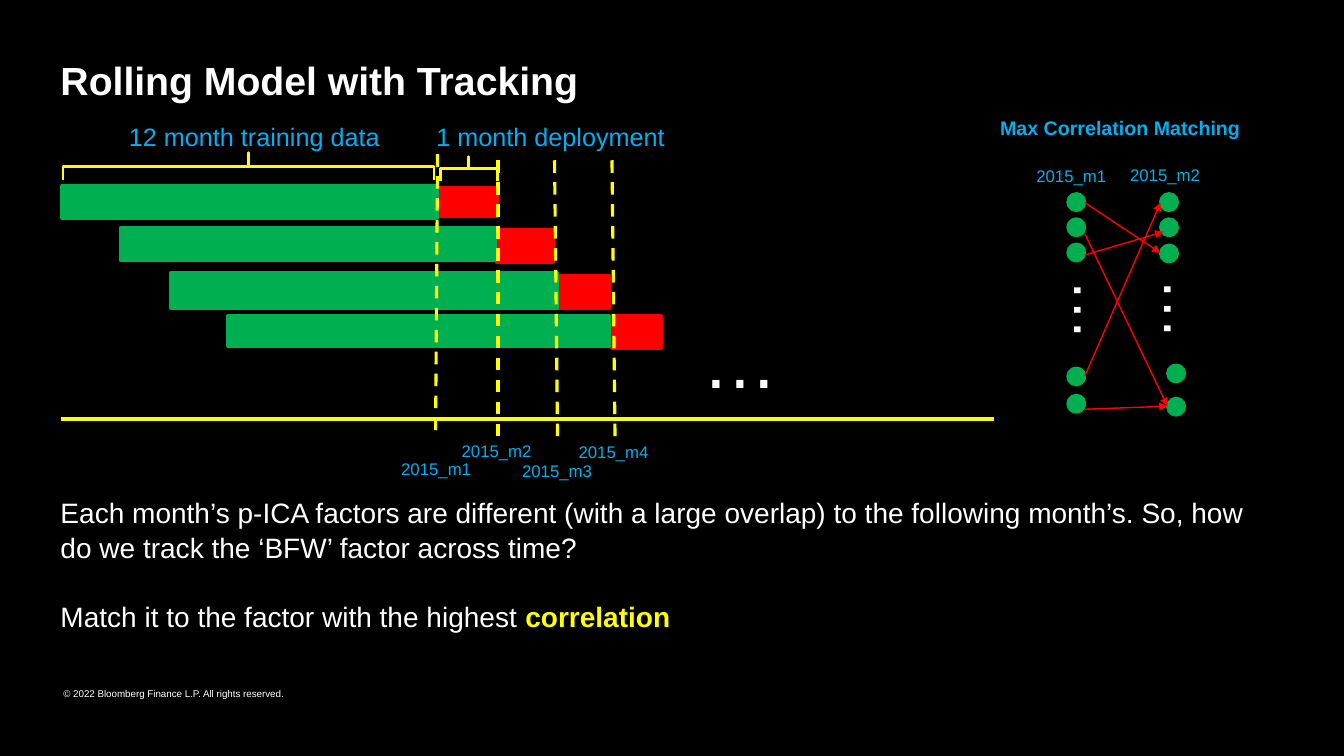
from pptx import Presentation
from pptx import util as u
from pptx.dml.color import RGBColor
from pptx.enum import dml, shapes, text
from pptx.oxml.ns import qn
from lxml import etree


class Theme:
    font = "Arial"
    black, white = RGBColor(0, 0, 0), RGBColor(255, 255, 255)
    green, red = RGBColor(0, 0xB0, 0x50), RGBColor(255, 0, 0)
    yellow, blue = RGBColor(255, 255, 0), RGBColor(0, 0xB0, 0xF0)
    title, body, heading, subheading, label, legal = 28, 20, 18, 14, 12, 7
    ellipsis, match_ellipsis = 54, 44


# Grid of square cells: 133.3 columns by 75 rows
CELL = u.Inches(0.1)
COLUMNS, ROWS = 133.3, 75

prs = Presentation()
prs.slide_width, prs.slide_height = int(COLUMNS * CELL), ROWS * CELL
slide = prs.slides.add_slide(prs.slide_layouts[1])
slide.background.fill.solid()
slide.background.fill.fore_color.rgb = Theme.black


def add_run(paragraph, words, size, color, bold=False):
    run = paragraph.add_run()
    run.text = words
    run.font.name, run.font.size, run.font.bold = Theme.font, u.Pt(size), bold
    run.font.color.rgb = color


def add_line(start, end, color, width):
    ends = [int(value * CELL) for value in (*start, *end)]
    line = slide.shapes.add_connector(shapes.MSO_CONNECTOR.STRAIGHT, *ends)
    line.line.color.rgb, line.line.width = color, u.Pt(width)
    properties = line.line._get_or_add_ln().getparent()
    etree.SubElement(properties, qn("a:effectLst"))
    return line


# Title and body text
title, body = slide.placeholders
for holder, area, anchor in (
    (title, (6, 5.2, 103, 5.4), text.MSO_ANCHOR.MIDDLE),
    (body, (6, 49, 120.9, 13.5), text.MSO_ANCHOR.TOP),
):
    holder.left, holder.top, holder.width, holder.height = (int(v * CELL) for v in area)
    frame = holder.text_frame
    frame.margin_left = frame.margin_right = frame.margin_top = frame.margin_bottom = 0
    frame.word_wrap, frame.vertical_anchor = True, anchor
    frame.auto_size = text.MSO_AUTO_SIZE.NONE

heading = title.text_frame.paragraphs[0]
heading.alignment = text.PP_ALIGN.LEFT
add_run(heading, "Rolling Model with Tracking", Theme.title, Theme.white, True)

question = body.text_frame.paragraphs[0]
answer = body.text_frame.add_paragraph()
for paragraph, gap in ((question, 0), (answer, 24)):
    paragraph.line_spacing, paragraph.space_before = 1.05, u.Pt(gap)
    layout = paragraph._p.get_or_add_pPr()
    layout.set("marL", "0")
    layout.set("indent", "0")
    etree.SubElement(layout, qn("a:buNone"))
add_run(question, "Each month’s p-ICA factors are different (with a large overlap) to the "
        "following month’s. So, how do we track the ‘BFW’ factor across time?",
        Theme.body, Theme.white)
add_run(answer, "Match it to the factor with the highest ", Theme.body, Theme.white)
add_run(answer, "correlation", Theme.body, Theme.yellow, True)

# Rolling windows: deployment month, then training year
BAR, DOT, BRACE = (shapes.MSO_SHAPE.RECTANGLE, shapes.MSO_SHAPE.OVAL,
                   shapes.MSO_SHAPE.LEFT_BRACE)
deployment = [(43.5, 18.6, 5.9, 2.9), (49.2, 22.8, 5.7, 3.3),
              (54.9, 27.3, 5.6, 3.3), (60.6, 31.3, 5, 3.3)]
training = [(6.1, 18.4, 37.3, 3.3), (11.9, 22.6, 37.3, 3.3),
            (16.9, 27, 38.4, 3.6), (22.6, 31.3, 37.9, 3.1)]
parts = [(BAR, area, Theme.red) for area in deployment]
parts += [(BAR, area, Theme.green) for area in training]

# Factors of two neighbouring months
left_factors = [(105.9, row) for row in (19.2, 21.7, 24.2, 36.5, 39.2)]
right_factors = [(115.1, 19.2), (115.1, 21.7), (115.1, 24.3), (115.8, 36.2), (115.8, 39.5)]
parts += [(DOT, (*corner, 1.7, 1.7), Theme.green) for corner in left_factors + right_factors]

# Braces over the first window
parts += [(BRACE, area, Theme.yellow)
          for area in ((23.3, -1.9, 2.7, 36.8), (45.3, 13.9, 2.4, 5.7))]

for kind, area, color in parts:
    shape = slide.shapes.add_shape(kind, *(int(v * CELL) for v in area))
    shape.shadow.inherit = False
    shape.line.color.rgb, shape.line.width = color, u.Pt(2)
    if kind == BRACE:
        shape.fill.background()
        shape.rotation = 90
        shape.adjustments[0], shape.adjustments[1] = 0, 0.5
    else:
        shape.fill.solid()
        shape.fill.fore_color.rgb = color

# Time axis and month boundaries
for top, bottom in (((43.4, 15.3), (43.2, 43.4)), ((49.4, 15.9), (49.4, 43.4)),
                    ((55, 15.9), (55.3, 43.4)), ((60.7, 15.9), (61, 43.4))):
    boundary = add_line(top, bottom, Theme.yellow, 2.25)
    boundary.line.dash_style = dml.MSO_LINE.DASH
add_line((6.1, 41.6), (98.6, 41.6), Theme.yellow, 3)

# Matches between factors
for start, end in (((107.6, 20.1), (115.1, 25.1)), ((107.6, 23.2), (115.8, 40.3)),
                   ((107.6, 40.6), (115.8, 40.3)), ((107.6, 37.3), (115.1, 20.1)),
                   ((107.6, 25.3), (115.4, 23))):
    match = add_line(start, end, Theme.red, 1)
    etree.SubElement(match.line._get_or_add_ln(), qn("a:tailEnd"), type="triangle")

# Headings, month labels and the legal line
labels = [
    ("12 month training data", (11.8, 11.5, 29.2, 4), Theme.heading, Theme.blue, False),
    ("1 month deployment", (42.3, 11.5, 35.8, 4), Theme.heading, Theme.blue, False),
    ("Max Correlation Matching", (98.2, 11, 25.9, 3.4), Theme.subheading, Theme.blue, True),
    ("© 2022 Bloomberg Finance L.P. All rights reserved.", (5.3, 67.7, 36.3, 2.2),
     Theme.legal, Theme.white, False),
]
labels += [(f"2015_m{month}", (column, row, 13.5, 3), Theme.label, Theme.blue, False)
           for month, column, row in ((1, 38.8, 45), (2, 44.8, 43.2), (3, 50.8, 45.2),
                                      (4, 56.4, 43.3), (1, 101.8, 16), (2, 111.1, 15.9))]
for words, area, size, color, bold in labels:
    box = slide.shapes.add_textbox(*(int(v * CELL) for v in area))
    box.text_frame.word_wrap = True
    add_run(box.text_frame.paragraphs[0], words, size, color, bold)

# Ellipses: more windows, more factors
for area, size, turn in (((68.6, 30.6, 9.6, 10.1), Theme.ellipsis, 0),
                         ((104.9, 26.6, 8.2, 8.4), Theme.match_ellipsis, 90),
                         ((113.8, 26.5, 8.2, 8.4), Theme.match_ellipsis, 90)):
    more = slide.shapes.add_textbox(*(int(v * CELL) for v in area))
    more.rotation = turn
    more.text_frame.word_wrap = False
    dots = more.text_frame.paragraphs[0]
    dots.alignment = text.PP_ALIGN.CENTER
    add_run(dots, "…", size, Theme.white)

prs.save("out.pptx")
